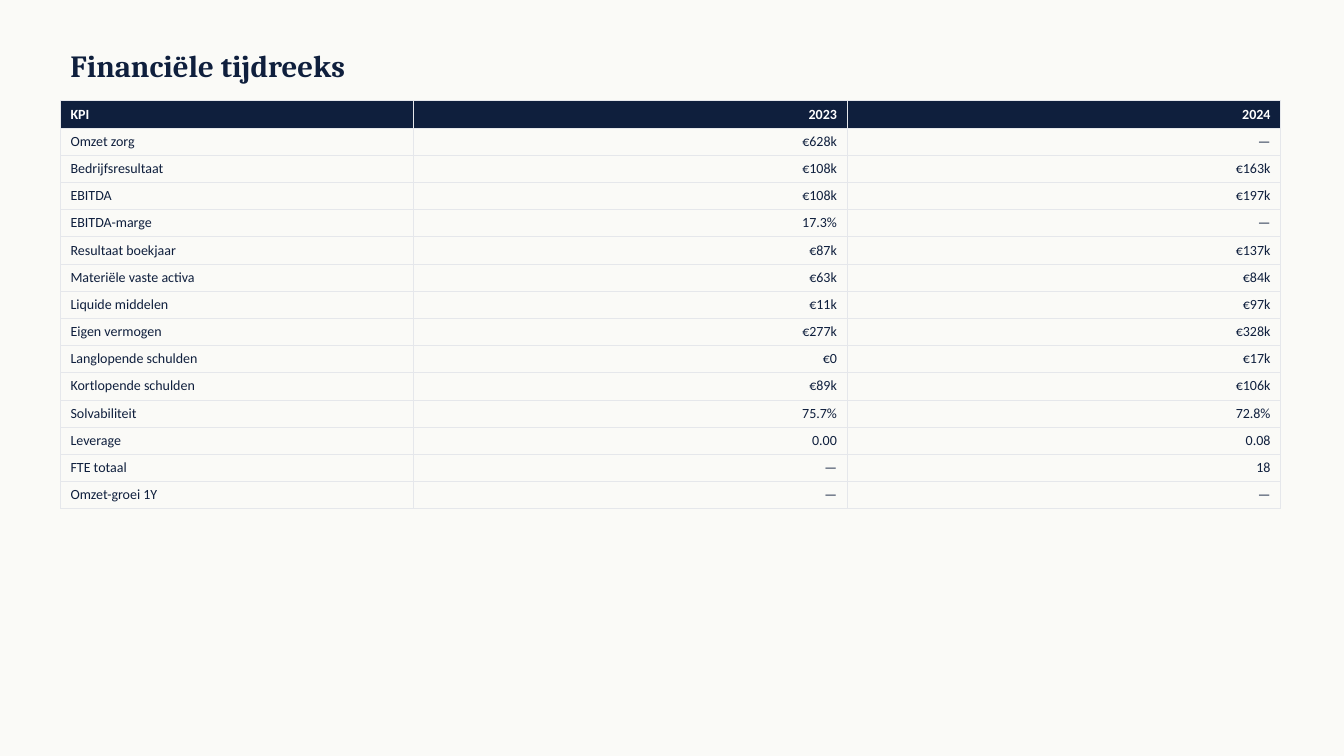
from lxml.etree import SubElement
from pptx import Presentation
from pptx.dml.color import RGBColor
from pptx.enum.text import MSO_ANCHOR as Anchor, PP_ALIGN as Align
from pptx.oxml.ns import qn
from pptx.util import Inches, Pt

NAVY, WHITE, PAPER, RULE = "0F1F3D", "FFFFFF", "FAFAF7", "E5E7EB"

KPI_ROWS = [
    ("KPI", "2023", "2024"),
    ("Omzet zorg", "€628k", "—"),
    ("Bedrijfsresultaat", "€108k", "€163k"),
    ("EBITDA", "€108k", "€197k"),
    ("EBITDA-marge", "17.3%", "—"),
    ("Resultaat boekjaar", "€87k", "€137k"),
    ("Materiële vaste activa", "€63k", "€84k"),
    ("Liquide middelen", "€11k", "€97k"),
    ("Eigen vermogen", "€277k", "€328k"),
    ("Langlopende schulden", "€0", "€17k"),
    ("Kortlopende schulden", "€89k", "€106k"),
    ("Solvabiliteit", "75.7%", "72.8%"),
    ("Leverage", "0.00", "0.08"),
    ("FTE totaal", "—", "18"),
    ("Omzet-groei 1Y", "—", "—"),
]
COLUMN_WIDTHS = [3.5, 4.3, 4.3]
ROW_HEIGHT = 0.27


def color(value):
    return RGBColor.from_string(value)


def write(para, text, ink, **formats):
    span = para.add_run()
    span.text = text
    span.font.color.rgb = color(ink)
    for name, value in formats.items():
        setattr(span.font, name, value)


# Page
deck = Presentation()
deck.slide_width, deck.slide_height = Inches(13.33), Inches(7.5)
page = deck.slides.add_slide(deck.slide_layouts[6])
page.background.fill.solid()
page.background.fill.fore_color.rgb = color(PAPER)

# Title
box = page.shapes.add_textbox(Inches(0.6), Inches(0.4), Inches(12), Inches(0.5))
box.text_frame.word_wrap = True
box.text_frame.vertical_anchor = Anchor.MIDDLE
write(box.text_frame.paragraphs[0], "Financiële tijdreeks", NAVY,
      name="Cambria", size=Pt(22), bold=True)

# KPI table
table = page.shapes.add_table(
    len(KPI_ROWS), len(COLUMN_WIDTHS), Inches(0.6), Inches(1),
    Inches(sum(COLUMN_WIDTHS)), Inches(ROW_HEIGHT * len(KPI_ROWS))).table
table.horz_banding = False
for column, width in zip(table.columns, COLUMN_WIDTHS):
    column.width = Inches(width)

for row_index, values in enumerate(KPI_ROWS):
    header = row_index == 0
    table.rows[row_index].height = Inches(ROW_HEIGHT)
    for column_index, value in enumerate(values):
        cell = table.cell(row_index, column_index)
        para = cell.text_frame.paragraphs[0]
        para.alignment = Align.RIGHT if column_index else Align.LEFT
        write(para, value, WHITE if header else NAVY,
              name="Calibri", size=Pt(10), bold=header)

        # Thin border on all four sides, placed before the fill
        properties = cell._tc.get_or_add_tcPr()
        for side in ("a:lnL", "a:lnR", "a:lnT", "a:lnB"):
            line = SubElement(properties, qn(side), w=str(Pt(0.5)))
            SubElement(SubElement(line, qn("a:solidFill")), qn("a:srgbClr"), val=RULE)

        if header:
            cell.fill.solid()
            cell.fill.fore_color.rgb = color(NAVY)
        else:
            cell.fill.background()

deck.save("out.pptx")
